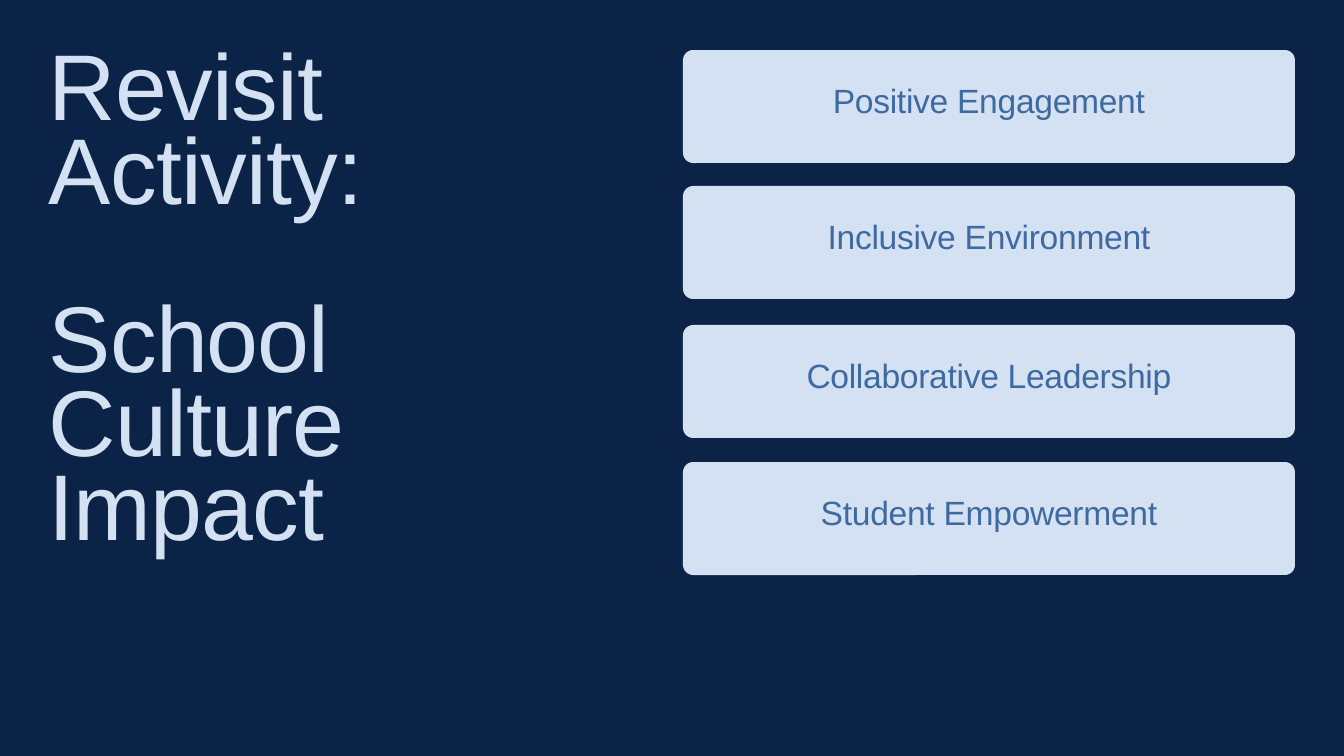
from pptx import Presentation
from pptx.dml.color import RGBColor
from pptx.enum.shapes import MSO_SHAPE
from pptx.enum.text import MSO_AUTO_SIZE, PP_ALIGN
from pptx.util import Pt

ROUNDED = MSO_SHAPE.ROUNDED_RECTANGLE
GROW = MSO_AUTO_SIZE.SHAPE_TO_FIT_TEXT
LEFT, CENTER = PP_ALIGN.LEFT, PP_ALIGN.CENTER

SLIDE_WIDTH, SLIDE_HEIGHT = 1344, 756
EMU_PER_PX = 18288000 / SLIDE_WIDTH
FONT = "Arial"
COLORS = {"background": "0B2347", "pale": "D4E1F2", "label": "3E6AA1"}

TITLE = ["Revisit Activity:", "School Culture Impact"]
CARDS = [
    (50, "Positive Engagement"),
    (186, "Inclusive Environment"),
    (325, "Collaborative Leadership"),
    (462, "Student Empowerment"),
]


def px(length):
    return round(length * EMU_PER_PX)


def color(name):
    return RGBColor.from_string(COLORS[name])


def add_text(slide, box, lines, size, leading, tracking, color_name,
             alignment=LEFT, gap=0):
    shape = slide.shapes.add_textbox(*map(px, box))
    text_frame = shape.text_frame
    text_frame.text = "\n".join(lines)
    text_frame.word_wrap = True
    text_frame.auto_size = GROW
    text_frame.margin_left = text_frame.margin_right = 0
    text_frame.margin_top = text_frame.margin_bottom = 0
    for index, paragraph in enumerate(text_frame.paragraphs):
        paragraph.alignment = alignment
        paragraph.line_spacing = Pt(leading)
        paragraph.space_before = Pt(gap if index else 0)
        for run in paragraph.runs:
            run.font.name = FONT
            run.font.size = Pt(size)
            run.font.color.rgb = color(color_name)
            run.font._element.set("spc", str(tracking))


def add_card(slide, top, label):
    card = slide.shapes.add_shape(ROUNDED, px(683), px(top), px(612), px(113))
    card.adjustments[0] = 0.09
    card.shadow.inherit = False
    card.fill.solid()
    card.fill.fore_color.rgb = color("pale")
    card.line.fill.background()
    add_text(slide, (730, top + 39, 518, 32), [label], 36, 33.6, -30,
             "label", CENTER)


def main():
    presentation = Presentation()
    presentation.slide_width = px(SLIDE_WIDTH)
    presentation.slide_height = px(SLIDE_HEIGHT)
    slide = presentation.slides.add_slide(presentation.slide_layouts[6])
    slide.background.fill.solid()
    slide.background.fill.fore_color.rgb = color("background")
    add_text(slide, (49, 55, 506, 525), TITLE, 100, 90, -100, "pale", gap=90)
    for top, label in CARDS:
        add_card(slide, top, label)
    presentation.save("out.pptx")


if __name__ == "__main__":
    main()
